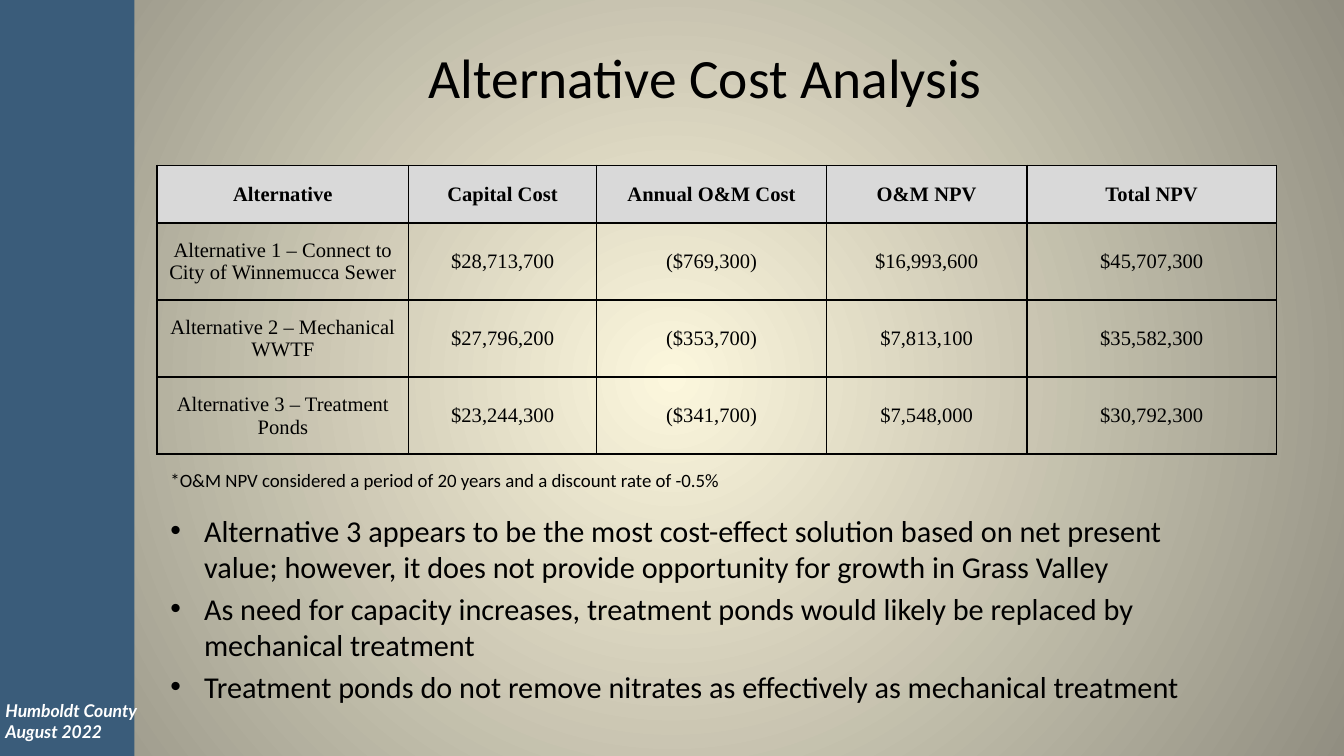
from dataclasses import dataclass

from lxml.etree import SubElement
from pptx import Presentation
from pptx.dml.color import RGBColor
from pptx.enum.shapes import MSO_SHAPE as SHAPE
from pptx.enum.text import MSO_ANCHOR as ANCHOR, PP_ALIGN as ALIGN
from pptx.oxml.ns import qn
from pptx.util import Inches, Pt


@dataclass(frozen=True)
class Theme:
    """Colours, fonts and type sizes of the slide."""
    glow: str = "FCF7DD"
    edge: str = "918E81"
    bar: str = "3A5C7A"
    header: str = "D9D9D9"
    ink: str = "000000"
    white: str = "FFFFFF"
    body_font: str = "Calibri"
    table_font: str = "Times New Roman"
    footer_font: str = "Lato"
    title: float = 29.7
    bullet: float = 16.2
    cell: float = 11
    note: float = 10.1
    footer: float = 9.4


T = Theme()

COLUMNS = [1.87, 1.4, 1.71, 1.49, 1.86]
TABLE_HEIGHT = 2.15
HEADER_HEIGHT = 0.43
COSTS = [
    ["Alternative", "Capital Cost", "Annual O&M Cost", "O&M NPV", "Total NPV"],
    ["Alternative 1 – Connect to City of Winnemucca Sewer",
     "$28,713,700", "($769,300)", "$16,993,600", "$45,707,300"],
    ["Alternative 2 – Mechanical WWTF",
     "$27,796,200", "($353,700)", "$7,813,100", "$35,582,300"],
    ["Alternative 3 – Treatment Ponds",
     "$23,244,300", "($341,700)", "$7,548,000", "$30,792,300"],
]
FINDINGS = [
    "Alternative 3 appears to be the most cost-effect solution based on net "
    "present value; however, it does not provide opportunity for growth in "
    "Grass Valley",
    "As need for capacity increases, treatment ponds would likely be replaced "
    "by mechanical treatment",
    "Treatment ponds do not remove nitrates as effectively as mechanical treatment",
]


def rgb(color):
    """Return a colour object for a hex string."""
    return RGBColor.from_string(color)


def add_run(p, text, size, font=T.body_font, color=T.ink, bold=False, italic=False):
    """Append a formatted run to a paragraph."""
    r = p.add_run()
    r.text = text
    r.font.size = Pt(size)
    r.font.name = font
    r.font.bold = bold
    r.font.italic = italic
    r.font.color.rgb = rgb(color)


def set_background(s):
    """Fill the background with a circular gradient."""
    fill = s.background.fill
    fill.gradient()
    for stop, color in zip(fill.gradient_stops, (T.glow, T.edge)):
        stop.color.rgb = rgb(color)
    grad = next(s.element.iter(qn("a:gradFill")))
    grad.remove(grad.find(qn("a:lin")))
    circle = SubElement(grad, qn("a:path"), path="circle")
    SubElement(circle, qn("a:fillToRect"),
               {side: "50000" for side in "ltrb"})


def add_bar(s, width, height):
    """Add the plain bar along the left edge."""
    sp = s.shapes.add_shape(SHAPE.RECTANGLE, 0, 0, width, height)
    sp.shadow.inherit = False
    sp.fill.solid()
    sp.fill.fore_color.rgb = rgb(T.bar)
    sp.line.fill.background()


def set_title(s, text, left, top, width, height):
    """Place and format the title placeholder."""
    sp = s.shapes.title
    sp.left, sp.top, sp.width, sp.height = left, top, width, height
    tf = sp.text_frame
    tf.vertical_anchor = ANCHOR.MIDDLE
    p = tf.paragraphs[0]
    p.alignment = ALIGN.CENTER
    add_run(p, text, T.title)


def set_bullet(p):
    """Give a paragraph a round bullet with a hanging indent."""
    pPr = p._p.get_or_add_pPr()
    pPr.set("marL", str(Inches(0.25)))
    pPr.set("indent", str(Inches(-0.25)))
    SubElement(pPr, qn("a:buFont"), typeface="Arial")
    SubElement(pPr, qn("a:buChar"), char="•")


def add_text(s, lines, left, top, width, height, size, bullets=False, gap=0, **style):
    """Add a text box with one paragraph per line and return its frame."""
    tf = s.shapes.add_textbox(left, top, width, height).text_frame
    tf.word_wrap = True
    for i, line in enumerate(lines):
        p = tf.add_paragraph() if i else tf.paragraphs[0]
        if bullets:
            set_bullet(p)
        if i and gap:
            p.space_before = Pt(gap)
        add_run(p, line, size, **style)
    return tf


def set_borders(cell):
    """Draw a thin line on every side of a cell."""
    tcPr = cell._tc.get_or_add_tcPr()
    for i, side in enumerate(("lnL", "lnR", "lnT", "lnB")):
        ln = tcPr.makeelement(qn(f"a:{side}"), {"w": str(Pt(1))})
        fill = SubElement(ln, qn("a:solidFill"))
        SubElement(fill, qn("a:srgbClr"), val=T.ink)
        tcPr.insert(i, ln)


def fill_cell(cell, text, header):
    """Write and format one table cell."""
    cell.margin_left = cell.margin_right = Inches(0.06)
    cell.margin_top = cell.margin_bottom = 0
    cell.vertical_anchor = ANCHOR.MIDDLE
    if header:
        cell.fill.solid()
        cell.fill.fore_color.rgb = rgb(T.header)
    else:
        cell.fill.background()
    set_borders(cell)
    p = cell.text_frame.paragraphs[0]
    p.alignment = ALIGN.CENTER
    add_run(p, text, T.cell, T.table_font, bold=header)


def add_cost_table(s, left, top):
    """Add the table of costs by alternative."""
    table = s.shapes.add_table(len(COSTS), len(COLUMNS), left, top,
                               Inches(sum(COLUMNS)), Inches(TABLE_HEIGHT)).table
    table.horz_banding = False
    for column, width in zip(table.columns, COLUMNS):
        column.width = Inches(width)
    body_height = (TABLE_HEIGHT - HEADER_HEIGHT) / (len(COSTS) - 1)
    for i, (row, texts) in enumerate(zip(table.rows, COSTS)):
        row.height = Inches(body_height if i else HEADER_HEIGHT)
        for cell, text in zip(row.cells, texts):
            fill_cell(cell, text, header=i == 0)


def main():
    """Build and save the slide."""
    prs = Presentation()
    prs.slide_width = Inches(10)
    prs.slide_height = Inches(10 * 9 / 16)
    s = prs.slides.add_slide(prs.slide_layouts[5])
    left = Inches(1.17)
    set_background(s)
    add_bar(s, Inches(1), prs.slide_height)
    footer = add_text(s, ["Humboldt County", "August 2022"], Inches(0.04), Inches(5.16),
                      Inches(1.12), Inches(0.35), T.footer, font=T.footer_font,
                      color=T.white, bold=True, italic=True)
    footer.margin_left = 0
    set_title(s, "Alternative Cost Analysis",
              Inches(1), Inches(0.1), Inches(8.5), Inches(0.94))
    add_cost_table(s, left, Inches(1.23))
    add_text(s, ["*O&M NPV considered a period of 20 years and a discount rate of -0.5%"],
             left, Inches(3.44), Inches(4.33), Inches(0.25), T.note)
    add_text(s, FINDINGS, left, Inches(3.76), Inches(7.75), Inches(1.47),
             T.bullet, bullets=True, gap=3)
    prs.save("out.pptx")


if __name__ == "__main__":
    main()
